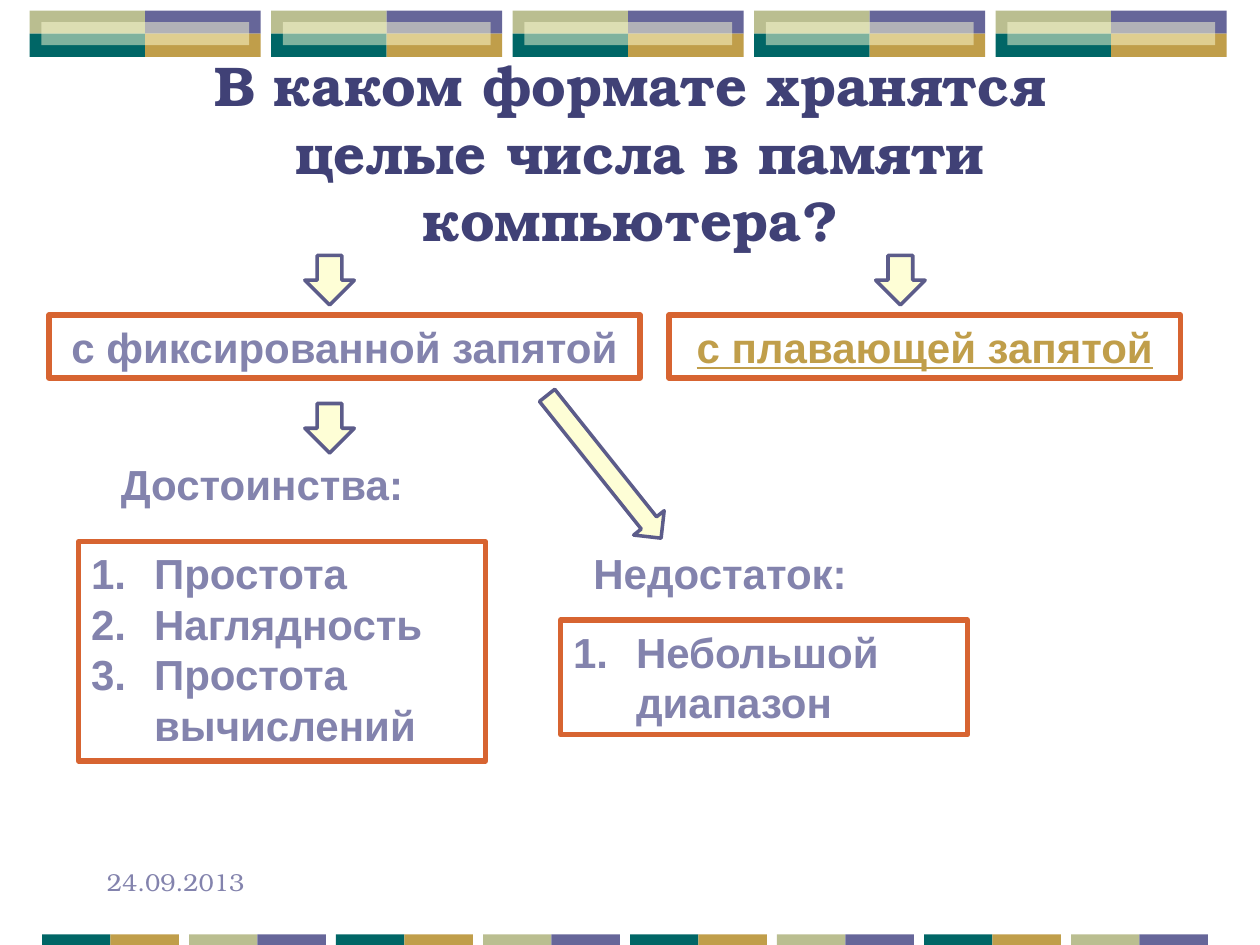
"""Build a slide on the formats used to store whole numbers in memory."""
from dataclasses import dataclass
from typing import NamedTuple, Optional

from lxml.etree import SubElement
from pptx import Presentation
from pptx.dml.color import RGBColor
from pptx.enum.shapes import MSO_SHAPE as SHAPE
from pptx.enum.text import MSO_ANCHOR as ANCHOR, PP_ALIGN as ALIGN
from pptx.oxml.ns import qn
from pptx.util import Pt


@dataclass(frozen=True)
class Theme:
    violet: str = "666699"
    gold: str = "C09E4A"
    teal: str = "006666"
    olive: str = "BABE90"
    cream: str = "FEFED6"
    title: str = "404176"
    body: str = "8383AD"
    frame: str = "D76431"
    arrow: str = "5C5C8A"
    serif: str = "TeX Gyre Bonum"
    sans: str = "Arial"
    title_size: float = 32
    body_size: float = 24
    date_size: float = 14
    frame_width: float = 3
    arrow_width: float = 2


THEME = Theme()


class Box(NamedTuple):
    left: float
    top: float
    width: float
    height: float


@dataclass(frozen=True)
class Label:
    box: Box
    lines: tuple[str, ...]
    size: float = THEME.body_size
    font: str = THEME.sans
    color: str = THEME.body
    bold: bool = True
    underline: bool = False
    align: ALIGN = ALIGN.LEFT
    anchor: ANCHOR = ANCHOR.TOP
    framed: bool = False
    numbered: bool = False


class Arrow(NamedTuple):
    box: Box
    rotation: float = 0


LABELS = (
    Label(Box(28, 44.6, 664.6, 84.2),
          ("В каком формате хранятся\v целые числа в памяти компьютера?",),
          size=THEME.title_size, font=THEME.serif, color=THEME.title,
          align=ALIGN.CENTER, anchor=ANCHOR.MIDDLE),
    Label(Box(28, 180, 337.7, 36), ("с фиксированной запятой",),
          align=ALIGN.CENTER, framed=True),
    Label(Box(62, 258.5, 244, 36), ("Достоинства:",)),
    Label(Box(45, 309.6, 232.5, 125.3),
          ("Простота", "Наглядность", "Простота вычислений"),
          framed=True, numbered=True),
    Label(Box(332, 309.6, 230.4, 36), ("Недостаток:",)),
    Label(Box(320.4, 354.3, 232.5, 65.5), ("Небольшой диапазон",),
          framed=True, numbered=True),
    Label(Box(382.3, 180, 292.3, 36), ("с плавающей запятой",),
          color=THEME.gold, underline=True, align=ALIGN.CENTER, framed=True),
    Label(Box(54, 491.8, 150, 36), ("24.09.2013",), size=THEME.date_size,
          font=THEME.serif, bold=False),
)

ARROWS = (
    Arrow(Box(174.2, 146, 28.3, 28.3)),
    Arrow(Box(500.4, 146, 28.3, 28.3)),
    Arrow(Box(174.2, 230.6, 28.3, 28.3)),
    Arrow(Box(334.1, 214.5, 22.3, 104.4), 321.4),
)


def add_shape(s, kind: SHAPE, box: Box, fill: Optional[str] = None,
              line: Optional[str] = None, width: float = 0):
    sp = s.shapes.add_shape(kind, *map(Pt, box))
    sp.shadow.inherit = False
    if fill:
        sp.fill.solid()
        sp.fill.fore_color.rgb = RGBColor.from_string(fill)
    else:
        sp.fill.background()
    if line:
        sp.line.color.rgb = RGBColor.from_string(line)
        sp.line.width = Pt(width)
    else:
        sp.line.fill.background()
    return sp


def add_tile(s, left: float) -> None:
    top, width, height = 6, 66, 13.25
    quarters = ((THEME.olive, THEME.violet), (THEME.teal, THEME.gold))
    for row, colors in enumerate(quarters):
        for col, color in enumerate(colors):
            box = Box(left + col * width, top + row * height, width, height)
            add_shape(s, SHAPE.RECTANGLE, box, color)
    veil = Box(left + 6.6, top + height / 2, 2 * (width - 6.6), height)
    sp = add_shape(s, SHAPE.RECTANGLE, veil, THEME.cream)
    color = next(sp.fill._xPr.iter(qn("a:srgbClr")))
    SubElement(color, qn("a:alpha"), val="50000")


def add_bar(s, left: float, colors: tuple[str, str]) -> None:
    width = 39.1
    for col, color in enumerate(colors):
        add_shape(s, SHAPE.RECTANGLE,
                  Box(left + col * width, 534, width, 6), color)


def add_label(s, label: Label) -> None:
    if label.framed:
        sp = add_shape(s, SHAPE.RECTANGLE, label.box,
                       line=THEME.frame, width=THEME.frame_width)
    else:
        sp = s.shapes.add_textbox(*map(Pt, label.box))
    tf = sp.text_frame
    tf.word_wrap = True
    tf.vertical_anchor = label.anchor
    font_format = {"name": label.font, "size": Pt(label.size),
                   "bold": label.bold, "underline": label.underline}
    for i, line in enumerate(label.lines):
        p = tf.add_paragraph() if i else tf.paragraphs[0]
        p.text = line
        p.alignment = label.align
        if label.numbered:
            props = p._p.get_or_add_pPr()
            props.set("marL", str(Pt(36)))
            props.set("indent", str(-Pt(36)))
            SubElement(props, qn("a:buFont"), typeface="+mj-lt")
            SubElement(props, qn("a:buAutoNum"), type="arabicPeriod")
        for r in p.runs:
            for name, value in font_format.items():
                setattr(r.font, name, value)
            r.font.color.rgb = RGBColor.from_string(label.color)


def add_arrow(s, arrow: Arrow) -> None:
    sp = add_shape(s, SHAPE.DOWN_ARROW, arrow.box, THEME.cream,
                   THEME.arrow, THEME.arrow_width)
    sp.rotation = arrow.rotation


def main() -> None:
    prs = Presentation()
    prs.slide_width, prs.slide_height = Pt(720), Pt(540)
    s = prs.slides.add_slide(prs.slide_layouts[6])
    for i in range(5):
        add_tile(s, 17 + 138 * i)
    pairs = ((THEME.teal, THEME.gold), (THEME.olive, THEME.violet))
    for i in range(8):
        add_bar(s, 24 + 84 * i, pairs[i % 2])
    for label in LABELS:
        add_label(s, label)
    for arrow in ARROWS:
        add_arrow(s, arrow)
    prs.save("out.pptx")


if __name__ == "__main__":
    main()
